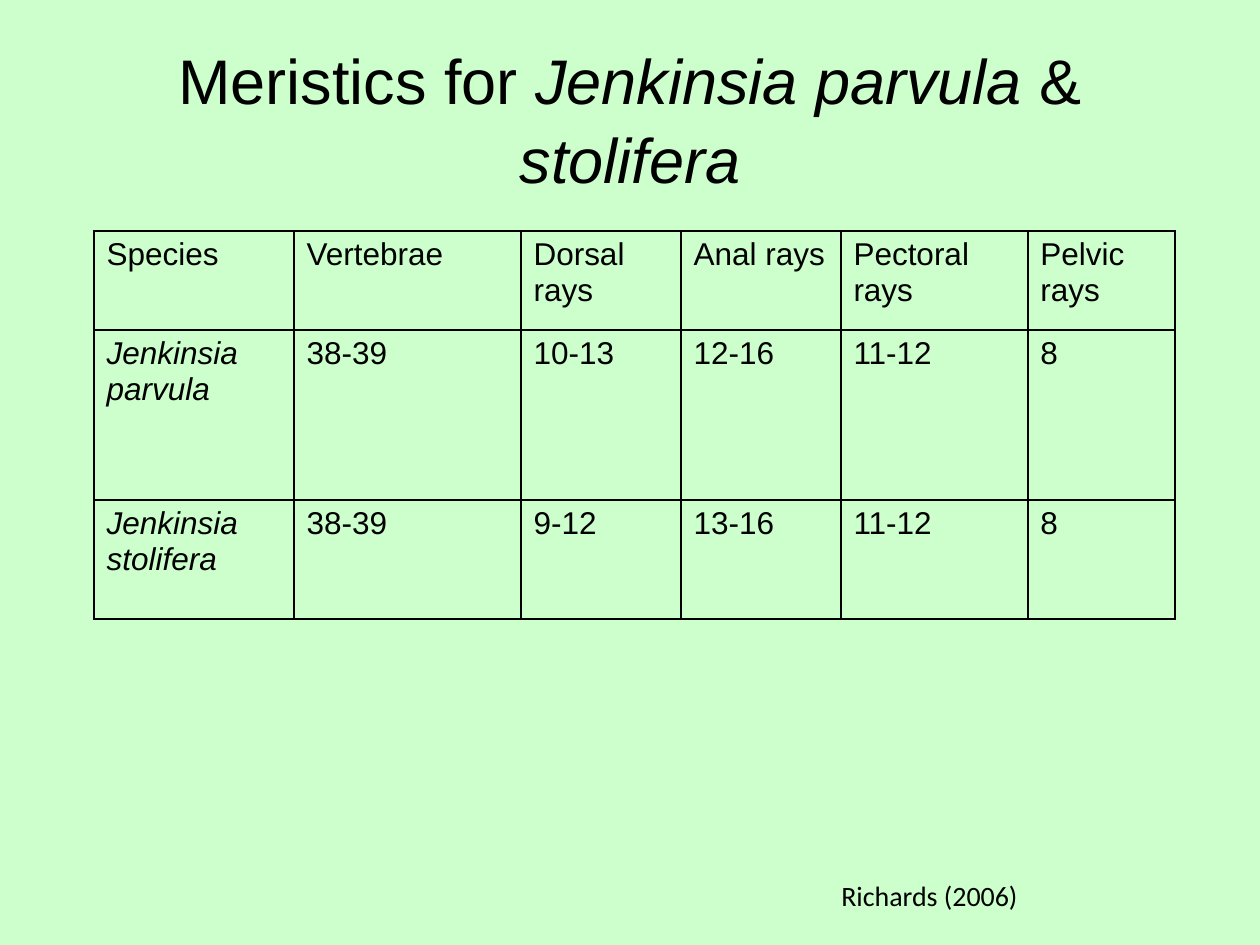
from dataclasses import dataclass

from lxml import etree
from pptx import Presentation
from pptx.dml.color import RGBColor
from pptx.enum.text import MSO_ANCHOR, PP_ALIGN
from pptx.oxml.ns import qn
from pptx.util import Emu, Pt

MIDDLE, TOP = MSO_ANCHOR.MIDDLE, MSO_ANCHOR.TOP
CENTER, LEFT = PP_ALIGN.CENTER, PP_ALIGN.LEFT
COLORS = {"back": "CCFFCC", "ink": "000000"}
SCALE = 914400 / 126


@dataclass
class Run:
    text: str
    slant: bool = False


@dataclass
class Label:
    box: tuple[int, int, int, int]
    runs: list[Run]
    size: int
    font: str
    align: PP_ALIGN = LEFT
    anchor: MSO_ANCHOR = TOP
    wrap: bool = True
    pitch: float = 1.0


TITLE = Label((63, 38, 1134, 158),
              [Run("Meristics for "), Run("Jenkinsia parvula ", True),
               Run("& "), Run("stolifera", True)],
              36, "Arial", CENTER, MIDDLE, pitch=1.05)
SOURCE = Label((829, 872, 204, 47), [Run("Richards (2006)")],
               16, "Calibri", wrap=False)

COLS = [200, 227, 160, 160, 187, 147]
ROWS = [99, 170, 119]
DATA = [
    ["Species", "Vertebrae", "Dorsal rays", "Anal rays", "Pectoral rays", "Pelvic rays"],
    ["Jenkinsia parvula", "38-39", "10-13", "12-16", "11-12", "8"],
    ["Jenkinsia stolifera", "38-39", "9-12", "13-16", "11-12", "8"],
]


def px(n: int) -> Emu:
    return Emu(round(n * SCALE))


def add_runs(para, runs: list[Run], size: int, font: str) -> None:
    for item in runs:
        run = para.add_run()
        run.text = item.text
        run.font.size = Pt(size)
        run.font.name = font
        run.font.italic = item.slant
        run.font.color.rgb = RGBColor.from_string(COLORS["ink"])


def add_label(slide, label: Label) -> None:
    frame = slide.shapes.add_textbox(*map(px, label.box)).text_frame
    frame.word_wrap = label.wrap
    frame.vertical_anchor = label.anchor
    para = frame.paragraphs[0]
    para.alignment = label.align
    para.line_spacing = label.pitch
    add_runs(para, label.runs, label.size, label.font)


def add_edges(cell) -> None:
    props = cell._tc.get_or_add_tcPr()
    for spot, side in enumerate(("lnL", "lnR", "lnT", "lnB")):
        line = etree.Element(qn(f"a:{side}"), w=str(Pt(1)))
        fill = etree.SubElement(line, qn("a:solidFill"))
        etree.SubElement(fill, qn("a:srgbClr"), val=COLORS["ink"])
        props.insert(spot, line)


def add_grid(slide, left: int, top: int) -> None:
    table = slide.shapes.add_table(
        len(ROWS), len(COLS), px(left), px(top), px(sum(COLS)), px(sum(ROWS))).table
    table.first_row = table.horz_banding = False
    for col, width in zip(table.columns, COLS):
        col.width = px(width)
    for row, height in zip(table.rows, ROWS):
        row.height = px(height)
    for r, words in enumerate(DATA):
        for c, text in enumerate(words):
            cell = table.cell(r, c)
            cell.fill.background()
            add_edges(cell)
            slant = r > 0 and c == 0
            add_runs(cell.text_frame.paragraphs[0], [Run(text, slant)], 18, "Arial")


def main() -> None:
    deck = Presentation()
    deck.slide_width, deck.slide_height = px(1260), px(945)
    slide = deck.slides.add_slide(deck.slide_layouts[6])
    back = slide.background.fill
    back.solid()
    back.fore_color.rgb = RGBColor.from_string(COLORS["back"])
    add_label(slide, TITLE)
    add_grid(slide, 94, 231)
    add_label(slide, SOURCE)
    deck.save("out.pptx")


if __name__ == "__main__":
    main()
